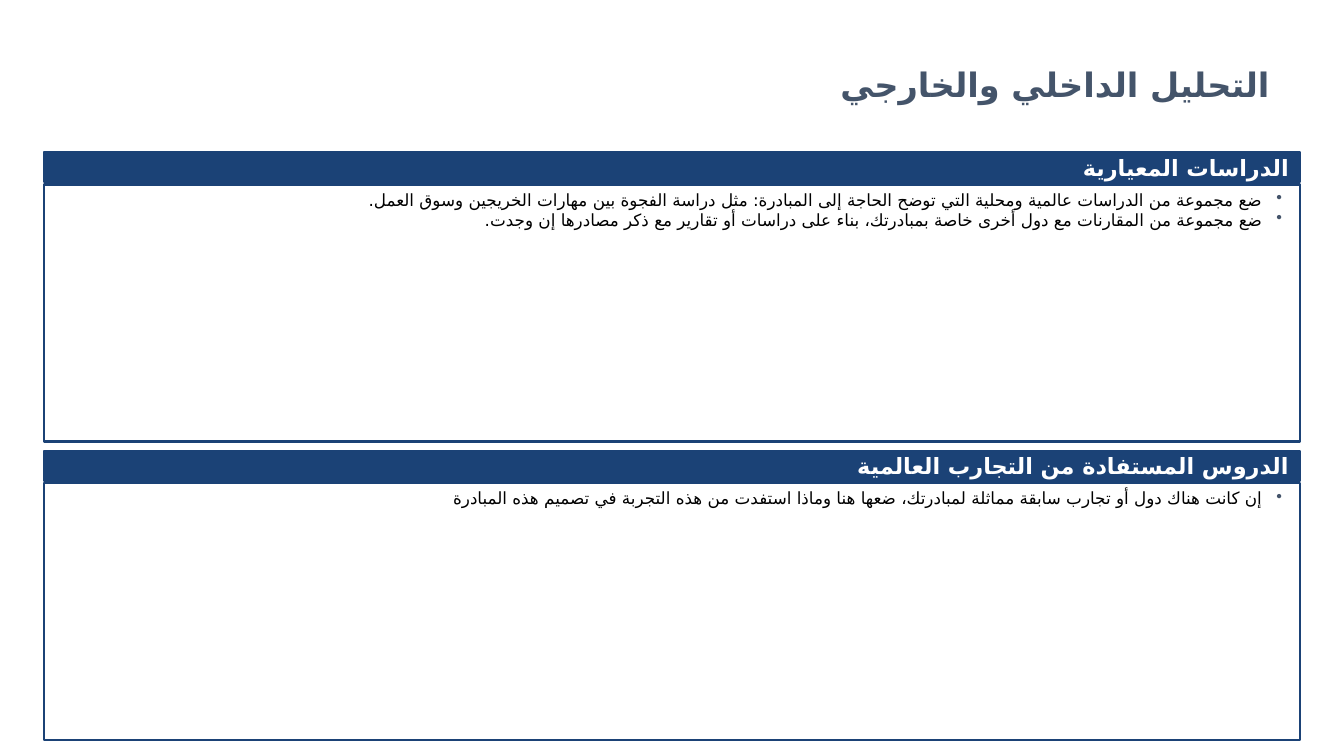
import pptx
import pptx.util
import pptx.dml.color
import pptx.enum.shapes
import pptx.enum.text
import pptx.oxml.ns
import lxml.etree

Pt = pptx.util.Pt
NAVY, SLATE, WHITE, BLACK = "1B4276", "44546A", "FFFFFF", "000000"


def color(value):
    return pptx.dml.color.RGBColor.from_string(value)


def write(paragraph, text, size, ink, bold=False, bullet=False):
    paragraph.alignment = pptx.enum.text.PP_ALIGN.RIGHT
    properties = paragraph._p.get_or_add_pPr()
    properties.set("rtl", "1")
    if bullet:
        paragraph.level = 1
        properties.set("marL", str(Pt(22.5)))
        properties.set("marR", "0")
        properties.set("indent", str(Pt(-13.5)))
        bullet_color = lxml.etree.SubElement(properties, pptx.oxml.ns.qn("a:buClr"))
        lxml.etree.SubElement(bullet_color, pptx.oxml.ns.qn("a:srgbClr"), val=SLATE)
        lxml.etree.SubElement(properties, pptx.oxml.ns.qn("a:buChar"), char="•")
    run = paragraph.add_run()
    run.text = text
    run.font.size = Pt(size)
    run.font.bold = bold
    run.font.name = "Calibri"
    run.font.color.rgb = color(ink)
    run_properties = run._r.get_or_add_rPr()
    run_properties.set("lang", "ar-SA")
    lxml.etree.SubElement(run_properties, pptx.oxml.ns.qn("a:cs"), typeface="DejaVu Sans")


presentation = pptx.Presentation()
presentation.slide_width = Pt(960)
presentation.slide_height = Pt(540)
slide = presentation.slides.add_slide(presentation.slide_layouts[6])

title = slide.shapes.add_textbox(Pt(46), Pt(49), Pt(861), Pt(26.6)).text_frame
title.word_wrap = True
title.auto_size = pptx.enum.text.MSO_AUTO_SIZE.SHAPE_TO_FIT_TEXT
title.margin_left = title.margin_right = title.margin_top = title.margin_bottom = 0
title.paragraphs[0].line_spacing = 0.9
write(title.paragraphs[0], "التحليل الداخلي والخارجي", 24, SLATE, bold=True)

sections = [
    ("الدراسات المعيارية", [
        "ضع مجموعة من الدراسات عالمية ومحلية التي توضح الحاجة إلى المبادرة: مثل دراسة الفجوة بين مهارات الخريجين وسوق العمل.",
        "ضع مجموعة من المقارنات مع دول أخرى خاصة بمبادرتك، بناء على دراسات أو تقارير مع ذكر مصادرها إن وجدت.",
    ]),
    ("الدروس المستفادة من التجارب العالمية", [
        "إن كانت هناك دول أو تجارب سابقة مماثلة لمبادرتك، ضعها هنا وماذا استفدت من هذه التجربة في تصميم هذه المبادرة",
    ]),
]

for index, (heading, points) in enumerate(sections):
    top = 108.7 + index * 213.3
    header = (top, 21.6, NAVY, 8, pptx.enum.text.MSO_ANCHOR.MIDDLE)
    body = (top + 23.1, 183.6, WHITE, 3.6, pptx.enum.text.MSO_ANCHOR.TOP)
    frames = []
    for y, height, fill, margin, anchor in (header, body):
        panel = slide.shapes.add_shape(
            pptx.enum.shapes.MSO_SHAPE.RECTANGLE, Pt(31.3), Pt(y), Pt(897.4), Pt(height))
        panel.shadow.inherit = False
        panel.fill.solid()
        panel.fill.fore_color.rgb = color(fill)
        panel.line.color.rgb = color(NAVY)
        panel.line.width = Pt(1.5)
        frame = panel.text_frame
        frame.word_wrap = True
        frame.vertical_anchor = anchor
        frame.margin_left = frame.margin_right = Pt(margin)
        frame.margin_top = frame.margin_bottom = Pt(margin)
        frames.append(frame)
    header_text, body_text = frames
    write(header_text.paragraphs[0], heading, 16, WHITE, bold=True)
    for number, point in enumerate(points):
        paragraph = body_text.add_paragraph() if number else body_text.paragraphs[0]
        write(paragraph, point, 12, BLACK, bullet=True)

presentation.save("out.pptx")
